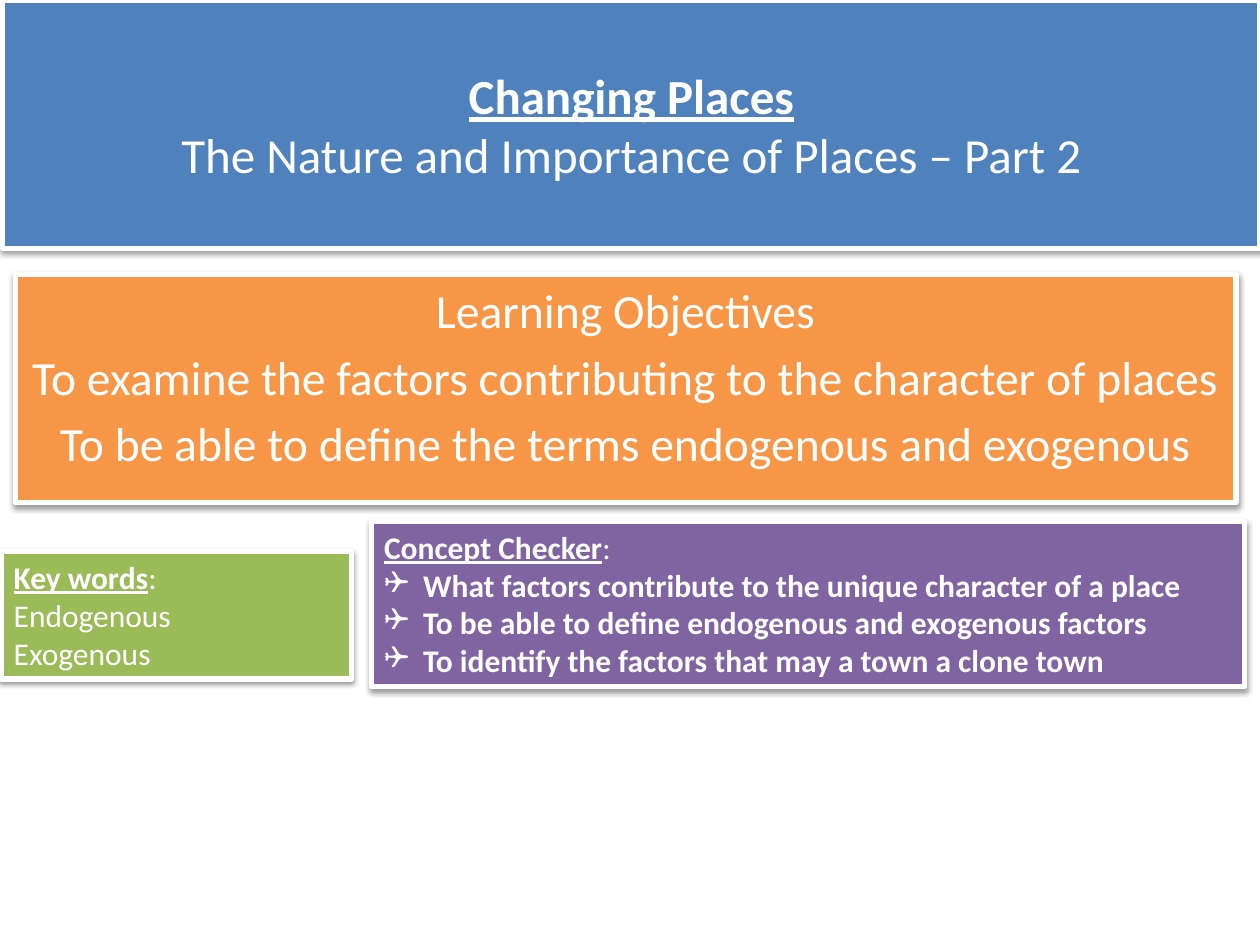
from lxml.etree import SubElement
from pptx import Presentation
from pptx.dml.color import RGBColor
from pptx.enum.text import MSO_ANCHOR as Anchor, MSO_AUTO_SIZE as AutoSize, PP_ALIGN as Align
from pptx.oxml.ns import qn
from pptx.util import Inches, Pt

WIDTH, HEIGHT = 10, 7.5
WHITE = "FFFFFF"
OBJECTIVES = [
    "Learning Objectives",
    "To examine the factors contributing to the character of places",
    "To be able to define the terms endogenous and exogenous",
]
KEY_WORDS = ["Endogenous", "Exogenous"]
CONCEPTS = [
    "What factors contribute to the unique character of a place",
    "To be able to define endogenous and exogenous factors",
    "To identify the factors that may a town a clone town",
]


def color(value):
    """Turn a hex string into a colour."""
    return RGBColor.from_string(value)


def add_shadow(sp):
    """Give a panel a soft shadow straight below it."""
    sp.shadow.inherit = False
    effects = sp._element.spPr.find(qn("a:effectLst"))
    shadow = SubElement(effects, qn("a:outerShdw"), blurRad=str(Pt(3.1)),
                        dist=str(Pt(1.6)), dir="5400000", rotWithShape="0")
    black = SubElement(shadow, qn("a:srgbClr"), val="000000")
    SubElement(black, qn("a:alpha"), val="38000")


def style_panel(sp, box, fill, anchor=Anchor.TOP, fit=AutoSize.NONE):
    """Place a panel and give it its fill, white border and shadow."""
    sp.left, sp.top, sp.width, sp.height = map(Inches, box)
    sp.fill.solid()
    sp.fill.fore_color.rgb = color(fill)
    sp.line.color.rgb = color(WHITE)
    sp.line.width = Pt(3)
    add_shadow(sp)
    tf = sp.text_frame
    tf.word_wrap = True
    tf.auto_size = fit
    tf.vertical_anchor = anchor
    return tf


def add_panel(s, box, fill, fit=AutoSize.NONE):
    """Add a text panel and return its text frame."""
    return style_panel(s.shapes.add_textbox(0, 0, 0, 0), box, fill, fit=fit)


def add_run(p, text, size, bold=False, underline=False):
    """Add a white run to a paragraph."""
    r = p.add_run()
    r.text = text
    r.font.name = "Calibri"
    r.font.size = Pt(size)
    r.font.bold = bold
    r.font.underline = underline
    r.font.color.rgb = color(WHITE)


def add_bullet(p, indent=0.31):
    """Give a paragraph a hanging check-box bullet."""
    pPr = p._p.get_or_add_pPr()
    pPr.set("marL", str(Inches(indent)))
    pPr.set("indent", str(-Inches(indent)))
    SubElement(pPr, qn("a:buFont"), typeface="Wingdings")
    SubElement(pPr, qn("a:buChar"), char="❑")


def add_title(s, box, heading, subject):
    """Fill the title with a heading line and a subject line."""
    tf = style_panel(s.shapes.title, box, "4F81BD", Anchor.MIDDLE)
    p = tf.paragraphs[0]
    p.alignment = Align.CENTER
    add_run(p, heading, 28, bold=True, underline=True)
    p.add_line_break()
    add_run(p, subject, 28)


def add_objectives(s, box, lines, size=27.2):
    """Add the panel of centred objectives."""
    tf = add_panel(s, box, "F79646")
    for i, line in enumerate(lines):
        p = tf.add_paragraph() if i else tf.paragraphs[0]
        p.alignment = Align.CENTER
        p.space_before = Pt(round(size * 0.2, 1))
        add_run(p, line, size)


def add_list(s, box, fill, heading, items, checked=False):
    """Add a panel with an underlined heading above its items."""
    tf = add_panel(s, box, fill, AutoSize.SHAPE_TO_FIT_TEXT)
    p = tf.paragraphs[0]
    add_run(p, heading, 18, bold=True, underline=True)
    add_run(p, ":", 18)
    for item in items:
        p = tf.add_paragraph()
        if checked:
            add_bullet(p)
        add_run(p, item, 18, bold=checked)


def main():
    """Build the slide and save it."""
    prs = Presentation()
    prs.slide_width, prs.slide_height = Inches(WIDTH), Inches(HEIGHT)
    s = prs.slides.add_slide(prs.slide_layouts[5])
    add_title(s, (0.02, 0, WIDTH - 0.02, 1.97), "Changing Places",
              "The Nature and Importance of Places – Part 2")
    add_objectives(s, (0.12, 2.18, 9.69, 1.81), OBJECTIVES)
    add_list(s, (0.01, 4.38, 2.78, 1.01), "9BBB59", "Key words", KEY_WORDS)
    add_list(s, (2.95, 4.14, 6.93, 1.31), "8064A2", "Concept Checker", CONCEPTS, checked=True)
    prs.save("out.pptx")


if __name__ == "__main__":
    main()
